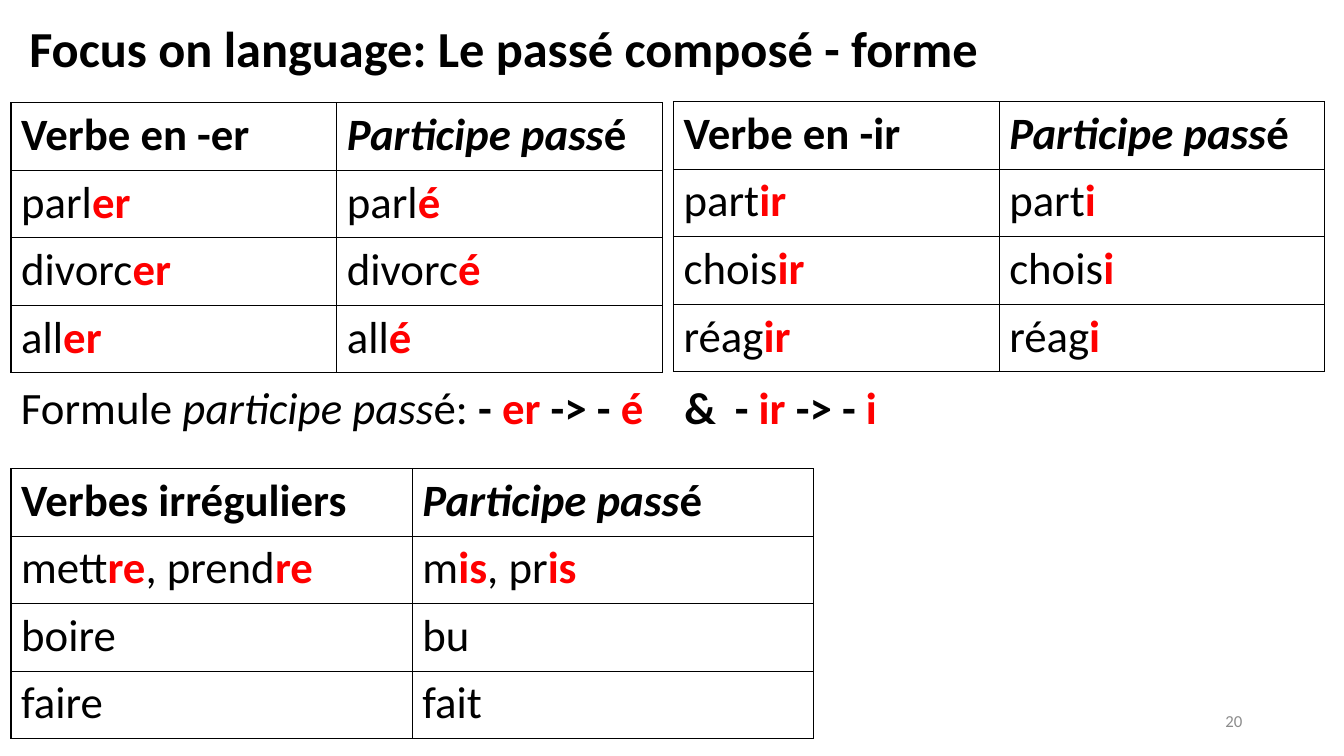
from pptx import Presentation
from pptx.dml.color import RGBColor
from pptx.enum.text import MSO_ANCHOR, PP_ALIGN
from pptx.oxml import parse_xml
from pptx.oxml.ns import nsdecls
from pptx.util import Inches, Pt

# Content: "|" parts the runs; a first "*" is bold, "/" italic,
# "#" bold italic, "!" bold in the accent colour
TITLE = "*Focus on language: Le passé composé - forme"
PAST = "#Participe pass|*é"
RULE = ("Formule |/participe pass|é: |*- |!er |*-> -|! é\t|"
        "*&\t- |!ir |*-> - |!i")
NUMBER = "20"

# Each table: left, top, column width, rows
TABLES = [
    (0.11, 1.02, 3.23, [
        ("*Verbe en -er", PAST),
        ("parl|!er", "parl|!é"),
        ("divorc|!er", "divorc|!é"),
        ("all|!er", "all|!é"),
    ]),
    (6.68, 1.01, 3.23, [
        ("*Verbe en -ir", PAST),
        ("part|!ir", "part|!i"),
        ("chois|!ir", "chois|!i"),
        ("réag|!ir", "réag|!i"),
    ]),
    (0.11, 4.65, 3.98, [
        ("*Verbes irréguliers", PAST),
        ("mett|!re|, prend|!re", "m|!is|, pr|!is"),
        ("boire", "bu"),
        ("faire", "fait"),
    ]),
]
ROW = 0.67
TABS = (6.58, 7.08)

THEME = {
    "font": "Calibri",
    "ink": "000000", "accent": "FF0000", "muted": "8C8C8C",
    "title": 36, "body": 32, "small": 12,
}


def write(frame, text, size="body", color="ink", align=PP_ALIGN.LEFT,
          anchor=MSO_ANCHOR.TOP, spacing=None):
    """Fill a text frame with marked-up runs."""
    frame.word_wrap = True
    frame.vertical_anchor = anchor
    para = frame.paragraphs[0]
    para.alignment = align
    para.line_spacing = spacing
    for part in text.split("|"):
        mark = part[0] if part[0] in "*/#!" else ""
        run = para.add_run()
        run.text = part[len(mark):]
        font = run.font
        font.name, font.size = THEME["font"], Pt(THEME[size])
        font.bold = mark in ("*", "#", "!")
        font.italic = mark in ("/", "#")
        tone = "accent" if mark == "!" else color
        font.color.rgb = RGBColor.from_string(THEME[tone])
    return para


def outline(cell):
    """Draw a thin line on all four sides of a cell."""
    props = cell._tc.get_or_add_tcPr()
    for spot, side in enumerate(("lnL", "lnR", "lnT", "lnB")):
        props.insert(spot, parse_xml(
            f'<a:{side} {nsdecls("a")} w="12700"><a:solidFill>'
            f'<a:srgbClr val="{THEME["ink"]}"/></a:solidFill></a:{side}>'))


def grid(slide, left, top, width, rows):
    """Add one bordered verb table."""
    count = len(rows[0])
    table = slide.shapes.add_table(
        len(rows), count, Inches(left), Inches(top),
        Inches(width * count), Inches(ROW * len(rows))).table
    table.first_row = table.horz_banding = False
    for r, row in enumerate(rows):
        for c, text in enumerate(row):
            cell = table.cell(r, c)
            cell.fill.background()
            outline(cell)
            write(cell.text_frame, text)


def box(slide, left, top, width, height):
    return slide.shapes.add_textbox(
        Inches(left), Inches(top), Inches(width), Inches(height)).text_frame


def main():
    deck = Presentation()
    deck.slide_width, deck.slide_height = Inches(13.33), Inches(7.5)
    slide = deck.slides.add_slide(deck.slide_layouts[5])

    # Title
    title = slide.shapes.title
    title.left, title.top = Inches(0.19), Inches(0.27)
    title.width, title.height = Inches(10.34), Inches(0.47)
    write(title.text_frame, TITLE, size="title",
          anchor=MSO_ANCHOR.MIDDLE, spacing=0.9)

    # Verb tables
    for spec in TABLES:
        grid(slide, *spec)

    # Rule, with tab stops for its second half
    para = write(box(slide, 0.11, 3.72, 12.75, 0.64), RULE)
    stops = "".join(f'<a:tab pos="{Inches(t)}" algn="l"/>' for t in TABS)
    para._p.get_or_add_pPr().append(
        parse_xml(f'<a:tabLst {nsdecls("a")}>{stops}</a:tabLst>'))

    # Slide number
    write(box(slide, 9.42, 6.95, 3, 0.4), NUMBER, size="small",
          color="muted", align=PP_ALIGN.RIGHT, anchor=MSO_ANCHOR.MIDDLE)

    deck.save("out.pptx")


if __name__ == "__main__":
    main()
